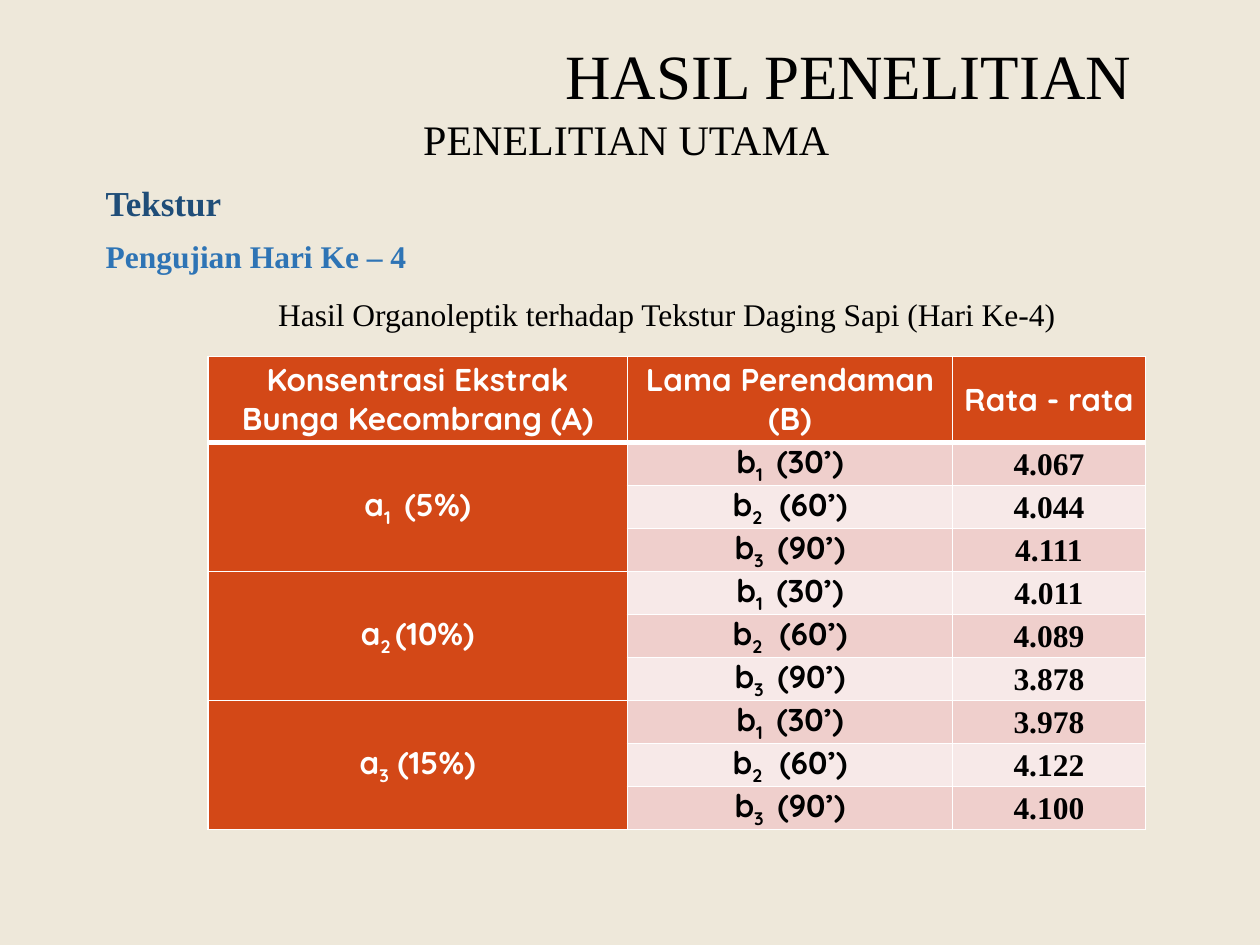
from lxml import etree
from pptx import Presentation
from pptx.dml.color import RGBColor
from pptx.enum.text import MSO_ANCHOR, MSO_AUTO_SIZE, PP_ALIGN
from pptx.oxml.ns import qn
from pptx.util import Inches, Pt

LEFT, CENTER, RIGHT = PP_ALIGN.LEFT, PP_ALIGN.CENTER, PP_ALIGN.RIGHT
TOP, MIDDLE = MSO_ANCHOR.TOP, MSO_ANCHOR.MIDDLE
FIT_SHAPE, NO_FIT = MSO_AUTO_SIZE.SHAPE_TO_FIT_TEXT, MSO_AUTO_SIZE.NONE

CREAM = RGBColor(0xEE, 0xE8, 0xDA)
BLACK = RGBColor(0x00, 0x00, 0x00)
WHITE = RGBColor(0xFF, 0xFF, 0xFF)
NAVY = RGBColor(0x1F, 0x4D, 0x78)
BLUE = RGBColor(0x2E, 0x74, 0xB5)
ORANGE = RGBColor(0xD3, 0x48, 0x17)
ROSE = RGBColor(0xEF, 0xCF, 0xCC)
PALE_ROSE = RGBColor(0xF7, 0xE9, 0xE8)
SERIF, ROUNDED = "Times New Roman", "Quicksand"


def style(paragraph, size, color, font=SERIF, bold=False, align=LEFT, spacing=1.0):
    paragraph.alignment = align
    paragraph.line_spacing = spacing
    paragraph.font.size = Pt(size)
    paragraph.font.name = font
    paragraph.font.bold = bold
    paragraph.font.color.rgb = color


def fill_cell(cell, parts, fill, color, font=ROUNDED, spacing=1.0, after=3, bottom=1):
    """Write parts as runs, the second one as a subscript, with white borders."""
    cell.margin_left = cell.margin_right = Inches(0.07)
    cell.margin_top = cell.margin_bottom = 0
    cell.vertical_anchor = MIDDLE
    paragraph = cell.text_frame.paragraphs[0]
    style(paragraph, 18, color, font, True, CENTER, spacing)
    paragraph.space_after = Pt(after)
    for index, part in enumerate(parts):
        run = paragraph.add_run()
        run.text = part
        if index == 1:
            run.font._element.set("baseline", "-25000")
    properties = cell._tc.get_or_add_tcPr()
    for side, width in (("L", 1), ("R", 1), ("T", 1), ("B", bottom)):
        line = etree.SubElement(properties, qn(f"a:ln{side}"), w=str(Pt(width)))
        solid = etree.SubElement(line, qn("a:solidFill"))
        etree.SubElement(solid, qn("a:srgbClr"), val=str(WHITE))
    cell.fill.solid()
    cell.fill.fore_color.rgb = fill


prs = Presentation()
prs.slide_width, prs.slide_height = Inches(10), Inches(7.5)
slide = prs.slides.add_slide(prs.slide_layouts[5])
slide.background.fill.solid()
slide.background.fill.fore_color.rgb = CREAM

title = slide.shapes.title
title.left, title.top = Inches(2.11), Inches(0.3)
title.width, title.height = Inches(6.97), Inches(0.66)
title.text_frame.text = "HASIL PENELITIAN"
title.text_frame.vertical_anchor = MIDDLE
style(title.text_frame.paragraphs[0], 36, BLACK, align=RIGHT, spacing=0.9)

# text, left, top, width, height, size, colour, bold, alignment, spacing, anchor, wrap, fit
headings = [
    ("PENELITIAN UTAMA", 1.26, 0.95, 5.42, 0.4, 24, BLACK, False, RIGHT, 0.7, MIDDLE, True, NO_FIT),
    ("Tekstur", 0.74, 1.06, 1.13, 0.68, 20, NAVY, True, LEFT, 2.0, TOP, False, FIT_SHAPE),
    ("Pengujian Hari Ke – 4", 0.74, 1.53, 2.74, 0.71, 18, BLUE, True, LEFT, 2.0, TOP, False, FIT_SHAPE),
    ("Hasil Organoleptik terhadap Tekstur Daging Sapi (Hari Ke-4)",
     2.11, 2.29, 6.56, 0.4, 18, BLACK, False, LEFT, 1.0, TOP, True, FIT_SHAPE),
]
for text, left, top, width, height, size, color, bold, align, spacing, anchor, wrap, fit in headings:
    box = slide.shapes.add_textbox(Inches(left), Inches(top), Inches(width), Inches(height))
    frame = box.text_frame
    frame.text = text
    frame.word_wrap = wrap
    frame.auto_size = fit
    frame.vertical_anchor = anchor
    style(frame.paragraphs[0], size, color, bold=bold, align=align, spacing=spacing)

column_heads = [
    ("Konsentrasi Ekstrak Bunga Kecombrang (A)", 3.33, 1),
    ("Lama Perendaman (B)", 2.58, 1),
    ("Rata - rata", 1.53, 3),
]
soaking_times = [("b", "1 ", " (30’)"), ("b", "2", "  (60’)"), ("b", "3 ", " (90’)")]
concentrations = [
    (("a", "1 ", " (5%)"), ("4.067", "4.044", "4.111")),
    (("a", "2 ", "(10%)"), ("4.011", "4.089", "3.878")),
    (("a", "3", " (15%)"), ("3.978", "4.122", "4.100")),
]

table = slide.shapes.add_table(
    10, 3, Inches(1.65), Inches(2.83), Inches(7.44), Inches(3.57)).table
for row in table.rows:
    row.height = Inches(0.32)
table.rows[0].height = Inches(0.68)
for column, (head, width, after) in enumerate(column_heads):
    table.columns[column].width = Inches(width)
    fill_cell(table.cell(0, column), [head], ORANGE, WHITE, after=after, bottom=3)

for group, (concentration, means) in enumerate(concentrations):
    first = 1 + 3 * group
    table.cell(first, 0).merge(table.cell(first + 2, 0))
    fill_cell(table.cell(first, 0), concentration, ORANGE, WHITE)
    for row, (time, mean) in enumerate(zip(soaking_times, means), first):
        band = ROSE if row % 2 else PALE_ROSE
        fill_cell(table.cell(row, 1), time, band, BLACK)
        fill_cell(table.cell(row, 2), [mean], band, BLACK, SERIF, 1.07)

prs.save("out.pptx")
